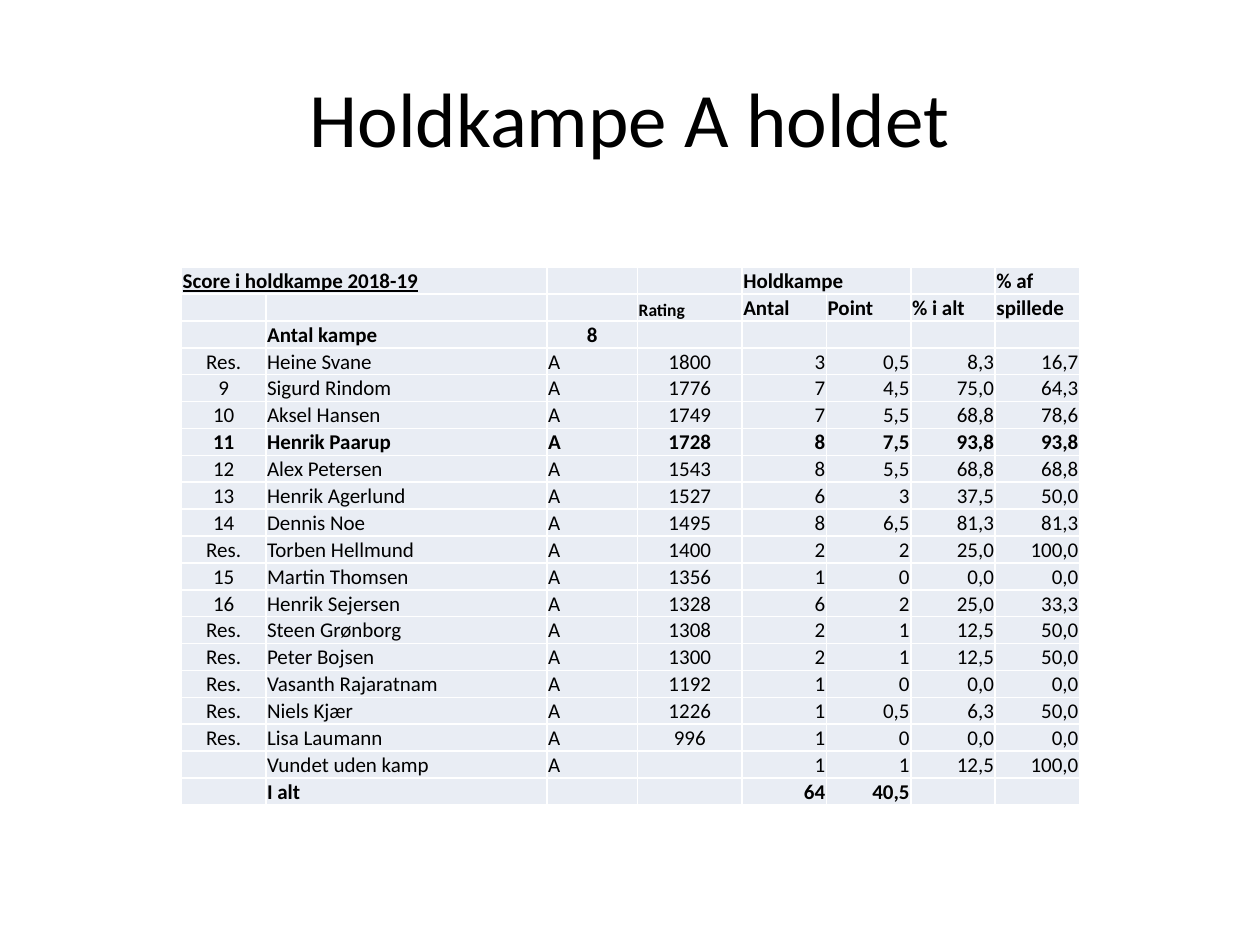
from lxml.etree import SubElement as Sub
from pptx import Presentation
from pptx.dml.color import RGBColor as Rgb
from pptx.enum.text import MSO_ANCHOR as Anchor, PP_ALIGN as Align
from pptx.oxml.ns import qn
from pptx.util import Inches, Pt

COLORS = {"text": "000000", "cell": "E9EDF4", "line": "FFFFFF"}
LEFT, MID, RIGHT = Align.LEFT, Align.CENTER, Align.RIGHT

# Table content
HEAD = [
    ["Score i holdkampe 2018-19", "", "", "", "Holdkampe", "", "", "% af"],
    ["", "", "", "Rating", "Antal", "Point", "% i alt", "spillede"],
    ["", "Antal kampe", "8", "", "", "", "", ""],
]
# Board, name, rating, games, points, % of all, % of played
SCORES = [
    ("Res.", "Heine Svane", "1800", "3", "0,5", "8,3", "16,7"),
    ("9", "Sigurd Rindom", "1776", "7", "4,5", "75,0", "64,3"),
    ("10", "Aksel Hansen", "1749", "7", "5,5", "68,8", "78,6"),
    ("11", "Henrik Paarup", "1728", "8", "7,5", "93,8", "93,8"),
    ("12", "Alex Petersen", "1543", "8", "5,5", "68,8", "68,8"),
    ("13", "Henrik Agerlund", "1527", "6", "3", "37,5", "50,0"),
    ("14", "Dennis Noe", "1495", "8", "6,5", "81,3", "81,3"),
    ("Res.", "Torben Hellmund", "1400", "2", "2", "25,0", "100,0"),
    ("15", "Martin Thomsen", "1356", "1", "0", "0,0", "0,0"),
    ("16", "Henrik Sejersen", "1328", "6", "2", "25,0", "33,3"),
    ("Res.", "Steen Grønborg", "1308", "2", "1", "12,5", "50,0"),
    ("Res.", "Peter Bojsen", "1300", "2", "1", "12,5", "50,0"),
    ("Res.", "Vasanth Rajaratnam", "1192", "1", "0", "0,0", "0,0"),
    ("Res.", "Niels Kjær", "1226", "1", "0,5", "6,3", "50,0"),
    ("Res.", "Lisa Laumann", "996", "1", "0", "0,0", "0,0"),
    ("", "Vundet uden kamp", "", "1", "1", "12,5", "100,0"),
]
TOTAL = ["", "I alt", "", "", "64", "40,5", "", ""]
ROWS = HEAD + [[no, name, "A", *rest] for no, name, *rest in SCORES] + [TOTAL]

WIDTHS = [0.67, 2.23, 0.72, 0.83] + [0.67] * 4
ALIGNS = [MID, LEFT, LEFT, MID] + [RIGHT] * 4
BOLD = {"Henrik Paarup", "I alt"}


class Deck:
    """Holds the style and the current slide."""

    def __init__(self, font="Calibri", size=12):
        self.font, self.size = font, size
        self.prs = Presentation()
        self.prs.slide_width, self.prs.slide_height = Inches(10), Inches(7.5)
        self.slide = self.prs.slides.add_slide(self.prs.slide_layouts[5])

    def style(self, para, size, align, bold=False, line=False):
        para.alignment = align
        for run in para.runs:
            font = run.font
            font.name, font.size = self.font, Pt(size)
            font.bold, font.underline = bold, line
            font.color.rgb = Rgb.from_string(COLORS["text"])

    def title(self, text):
        box = self.slide.shapes.title
        box.left, box.top = Inches(0.5), Inches(0.3)
        box.width, box.height = Inches(9), Inches(1.25)
        frame = box.text_frame
        frame.text = text
        frame.vertical_anchor = Anchor.MIDDLE
        self.style(frame.paragraphs[0], 44, MID)

    def border(self, cell):
        props = cell._tc.get_or_add_tcPr()
        for side in ("lnL", "lnR", "lnT", "lnB"):
            edge = Sub(props, qn(f"a:{side}"), w=str(Pt(1)))
            fill = Sub(edge, qn("a:solidFill"))
            Sub(fill, qn("a:srgbClr"), val=COLORS["line"])

    def cell(self, cell, text, align, bold, size, line):
        self.border(cell)
        cell.fill.solid()
        cell.fill.fore_color.rgb = Rgb.from_string(COLORS["cell"])
        cell.vertical_anchor = Anchor.BOTTOM
        cell.margin_left = cell.margin_right = cell.margin_top = Inches(0.01)
        cell.margin_bottom = 0
        para = cell.text_frame.paragraphs[0]
        if text:
            para.text = text
            self.style(para, size, align, bold, line)
        else:  # keeps empty cells as low as the rest
            Sub(para._p, qn("a:endParaRPr"), sz=str(size * 100))

    def table(self, rows, left, top, high):
        frame = self.slide.shapes.add_table(
            len(rows), len(WIDTHS), Inches(left), Inches(top),
            Inches(sum(WIDTHS)), Inches(high * len(rows)))
        grid = frame.table
        grid.first_row = grid.horz_banding = False
        for col, width in zip(grid.columns, WIDTHS):
            col.width = Inches(width)
        for r, row in enumerate(rows):
            grid.rows[r].height = Inches(high)
            head = r < len(HEAD)
            bold = head or row[1] in BOLD
            for c, text in enumerate(row):
                align = ALIGNS[c]
                if head:
                    align = MID if text.isdigit() else LEFT
                size = 10 if text == "Rating" else self.size
                self.cell(grid.cell(r, c), text, align, bold, size,
                          line=(r == c == 0))
        # Headings across two columns
        for c in (0, 4):
            grid.cell(0, c).merge(grid.cell(0, c + 1))


def main():
    deck = Deck()
    deck.title("Holdkampe A holdet")
    deck.table(ROWS, left=1.44, top=2.12, high=0.21)
    deck.prs.save("out.pptx")


if __name__ == "__main__":
    main()
